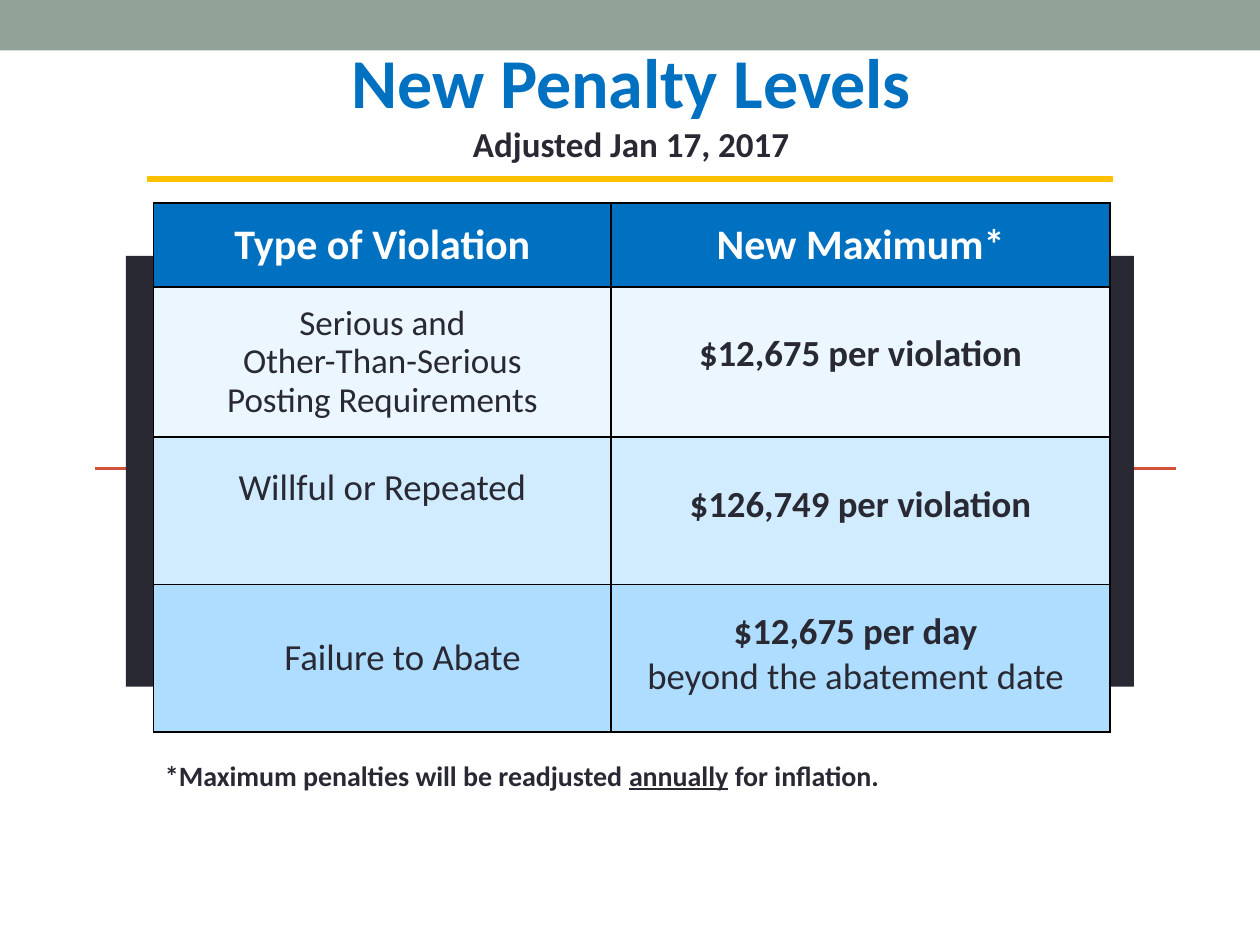
from lxml import etree
from pptx import Presentation
from pptx.dml.color import RGBColor
from pptx.enum.shapes import MSO_CONNECTOR, MSO_SHAPE
from pptx.enum.text import MSO_ANCHOR, MSO_AUTO_SIZE, PP_ALIGN
from pptx.oxml import parse_xml
from pptx.oxml.ns import nsdecls, qn
from pptx.util import Inches, Pt

RECTANGLE = MSO_SHAPE.RECTANGLE
STRAIGHT = MSO_CONNECTOR.STRAIGHT
MIDDLE = MSO_ANCHOR.MIDDLE
CENTER, LEFT = PP_ALIGN.CENTER, PP_ALIGN.LEFT

FONT = "Calibri"
TITLE_ONLY = 5
BLUE = RGBColor(0x00, 0x70, 0xC0)
DARK = RGBColor(0x29, 0x29, 0x34)
WHITE = RGBColor(0xFF, 0xFF, 0xFF)
SAGE = RGBColor(0x93, 0xA2, 0x99)
RED = RGBColor(0xD2, 0x53, 0x3C)
GOLD = RGBColor(0xFF, 0xC0, 0x00)
ROW_FILLS = [BLUE, RGBColor(0xEB, 0xF6, 0xFF),
             RGBColor(0xD1, 0xEB, 0xFF), RGBColor(0xAF, 0xDD, 0xFF)]

COLUMN_WIDTHS = [3.63, 3.96]
ROW_HEIGHTS = [0.67, 1.19, 1.17, 1.17]
SIDE_MARGIN = 0.07

# Each line is (text, size, bold); each cell is (lines, extra margins)
HEADERS = ["Type of Violation", "New Maximum*"]
ROWS = [
    [([(text, 24, True)], {}) for text in HEADERS],
    [([("Serious and", 20, False), ("Other-Than-Serious", 20, False),
       ("Posting Requirements", 20, False)], {}),
     ([("$12,675 per violation", 21, True)], {"bottom": 0.13})],
    [([("Willful or Repeated", 21, False)], {"bottom": 0.36}),
     ([("$126,749 per violation", 21, True)], {"bottom": 0.09})],
    [([("Failure to Abate", 21, False)], {"left": 0.32}),
     ([("$12,675 per day", 21, True),
       ("beyond the abatement date", 21, False)],
      {"right": 0.08, "bottom": 0.06})],
]


def format_paragraph(paragraph, size, color, bold, alignment=CENTER):
    paragraph.alignment = alignment
    font = paragraph.font
    font.name, font.size, font.bold = FONT, Pt(size), bold
    font.color.rgb = color


def add_block(slide, left, top, width, height, color):
    block = slide.shapes.add_shape(
        RECTANGLE, Inches(left), Inches(top), Inches(width), Inches(height))
    block.shadow.inherit = False
    block.fill.solid()
    block.fill.fore_color.rgb = color
    block.line.fill.background()


def add_rule(slide, left, right, y, color, width):
    rule = slide.shapes.add_connector(
        STRAIGHT, Inches(left), Inches(y), Inches(right), Inches(y))
    rule.line.color.rgb = color
    rule.line.width = Pt(width)
    etree.SubElement(rule._element.spPr, qn("a:effectLst"))


def add_title(slide):
    title = slide.shapes.title
    title.left, title.top = Inches(0.02), Inches(0.25)
    title.width, title.height = Inches(9.98), Inches(1.11)
    frame = title.text_frame
    frame.auto_size = MSO_AUTO_SIZE.NONE
    frame.vertical_anchor = MIDDLE
    frame.text = "New Penalty Levels\nAdjusted Jan 17, 2017"
    heading, subtitle = frame.paragraphs
    format_paragraph(heading, 40, BLUE, True)
    format_paragraph(subtitle, 20, DARK, True)


def add_borders(cell):
    properties = cell._tc.get_or_add_tcPr()
    for index, side in enumerate("LRTB"):
        properties.insert(index, parse_xml(
            f'<a:ln{side} {nsdecls("a")} w="12700"><a:solidFill>'
            f'<a:srgbClr val="000000"/></a:solidFill></a:ln{side}>'))


def fill_cell(cell, lines, extra, fill, color):
    cell.fill.solid()
    cell.fill.fore_color.rgb = fill
    cell.vertical_anchor = MIDDLE
    cell.margin_left = Inches(SIDE_MARGIN + extra.get("left", 0))
    cell.margin_right = Inches(SIDE_MARGIN + extra.get("right", 0))
    cell.margin_top = 0
    cell.margin_bottom = Inches(extra.get("bottom", 0))
    cell.text = "\n".join(text for text, _, _ in lines)
    for paragraph, (_, size, bold) in zip(cell.text_frame.paragraphs, lines):
        format_paragraph(paragraph, size, color, bold)
        if len(lines) == 3:
            paragraph.line_spacing = 0.9
    add_borders(cell)


def add_penalty_table(slide):
    table = slide.shapes.add_table(
        len(ROWS), len(HEADERS), Inches(1.22), Inches(1.61),
        Inches(sum(COLUMN_WIDTHS)), Inches(sum(ROW_HEIGHTS))).table
    for column, width in zip(table.columns, COLUMN_WIDTHS):
        column.width = Inches(width)
    for row_index, cells in enumerate(ROWS):
        table.rows[row_index].height = Inches(ROW_HEIGHTS[row_index])
        color = DARK if row_index else WHITE
        for column_index, (lines, extra) in enumerate(cells):
            fill_cell(table.cell(row_index, column_index), lines, extra,
                      ROW_FILLS[row_index], color)


def add_footnote(slide):
    box = slide.shapes.add_textbox(
        Inches(1.31), Inches(6), Inches(5.94), Inches(0.3))
    frame = box.text_frame
    frame.word_wrap = True
    frame.vertical_anchor = MIDDLE
    frame.margin_left = frame.margin_right = 0
    frame.margin_top = frame.margin_bottom = 0
    paragraph = frame.paragraphs[0]
    format_paragraph(paragraph, 16, DARK, True, LEFT)
    for text in ("*Maximum penalties will be readjusted ", "annually",
                 " for inflation."):
        run = paragraph.add_run()
        run.text = text
        if text == "annually":
            run.font.underline = True


def main():
    presentation = Presentation()
    presentation.slide_width = Inches(10)
    presentation.slide_height = Inches(7.5)
    slide = presentation.slides.add_slide(
        presentation.slide_layouts[TITLE_ONLY])

    # Background decoration
    add_block(slide, 0, 0, 10, 0.4, SAGE)
    add_rule(slide, 0.75, 9.33, 3.72, RED, 1.5)
    add_block(slide, 1, 2.03, 8, 3.42, DARK)

    # Content
    add_title(slide)
    add_penalty_table(slide)
    add_footnote(slide)
    add_rule(slide, 1.17, 8.83, 1.42, GOLD, 3)

    presentation.save("out.pptx")


if __name__ == "__main__":
    main()
